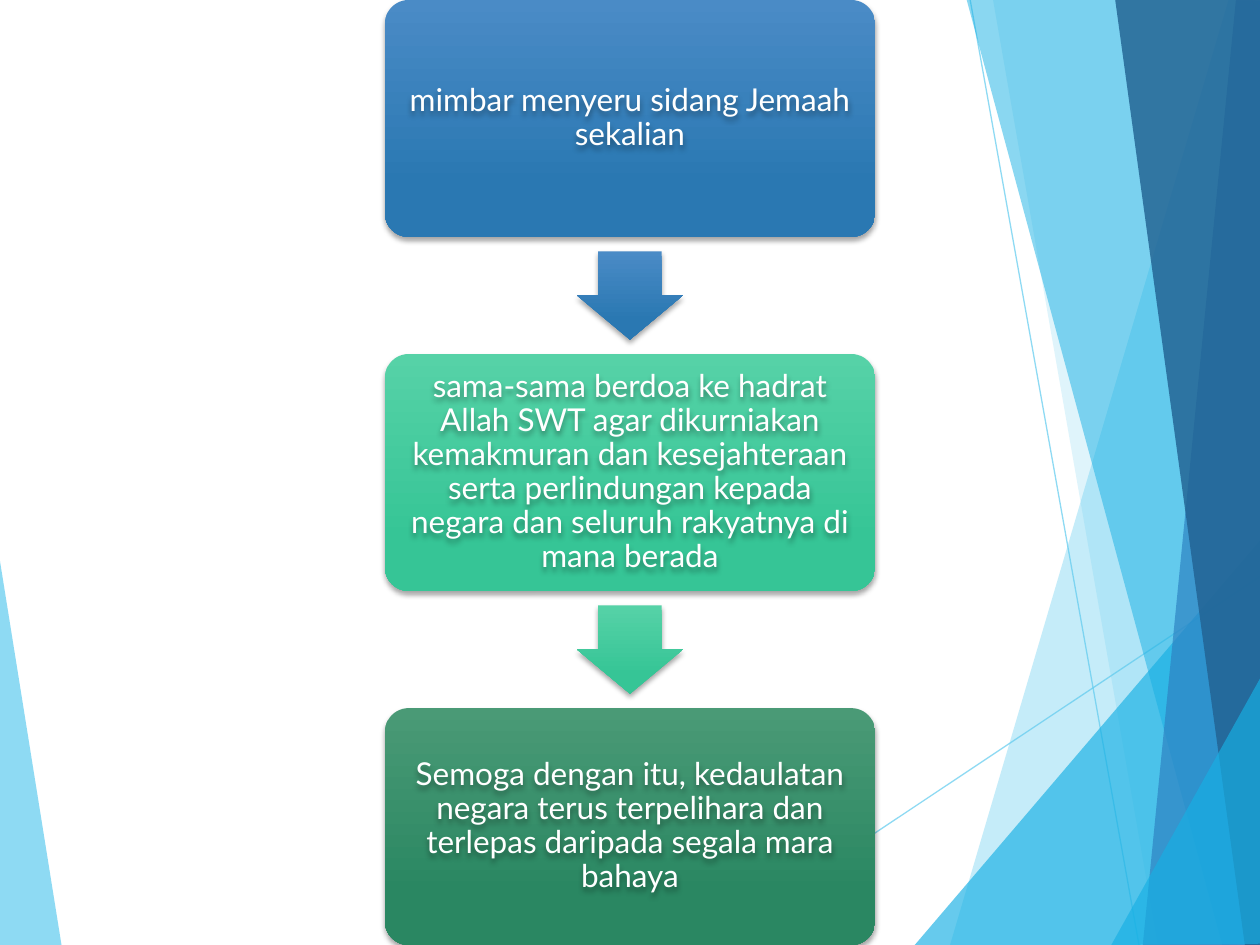
from dataclasses import dataclass

from lxml.etree import SubElement
from pptx import Presentation
from pptx.dml.color import RGBColor
from pptx.enum.shapes import MSO_CONNECTOR, MSO_SHAPE
from pptx.enum.text import MSO_ANCHOR, PP_ALIGN
from pptx.oxml.ns import qn
from pptx.util import Inches, Pt

COLORS = {
    "sky": "5FCBEF",
    "cyan": "17B0E4",
    "blue": "2E83C3",
    "navy": "226292",
    "white": "FFFFFF",
    "shadow": "000000",
    "step_blue_top": "4A8BC6",
    "step_blue_base": "2A78B2",
    "step_mint_top": "56D2A7",
    "step_mint_base": "36C596",
    "step_green_top": "4A9A76",
    "step_green_base": "2A8762",
}


@dataclass(frozen=True)
class Facet:
    points: tuple
    color: str
    opacity: int


@dataclass(frozen=True)
class Ray:
    start: tuple
    end: tuple


@dataclass(frozen=True)
class Step:
    text: str
    color: str


LEFT_FACET = Facet(((-0.01, 4.39), (0.49, 7.51), (-0.01, 7.5)), "sky", 70)
RAYS = (Ray((5.61, 7.5), (10.01, 4.57)), Ray((7.7, 0), (9.04, 7.5)))
RIGHT_FACETS = (
    Facet(((9.75, 0), (7.54, 7.5), (10.02, 7.51), (10.01, 0.01)), "sky", 36),
    Facet(((7.88, -0.01), (9.19, 7.5), (10.01, 7.5), (10.01, -0.01)), "sky", 20),
    Facet(((7.26, 7.5), (10, 4.29), (10.01, 7.5)), "cyan", 66),
    Facet(((7.67, -0.01), (9.7, 7.5), (10.01, 7.49), (10.01, -0.01)), "cyan", 50),
    Facet(((9.81, -0.01), (9.07, 7.5), (10.01, 7.5), (10, -0.01)), "blue", 70),
    Facet(((8.85, -0.01), (9.88, 7.5), (10.02, 7.5), (10, -0.01)), "navy", 82),
    Facet(((8.82, 7.5), (10.02, 5.35), (10.02, 7.49)), "cyan", 66),
)
STEPS = (
    Step("mimbar menyeru sidang Jemaah sekalian", "step_blue"),
    Step(
        "sama-sama berdoa ke hadrat Allah SWT agar dikurniakan kemakmuran dan "
        "kesejahteraan serta perlindungan kepada negara dan seluruh rakyatnya di "
        "mana berada",
        "step_mint",
    ),
    Step(
        "Semoga dengan itu, kedaulatan negara terus terpelihara dan terlepas "
        "daripada segala mara bahaya",
        "step_green",
    ),
)

CENTER = 5.0
STEP_WIDTH, STEP_HEIGHT, STEP_PITCH = 3.89, 1.88, 2.81
ARROW_WIDTH, ARROW_HEIGHT = 0.84, 0.7
TEXT_INSET = 0.055


def rgb(name: str) -> RGBColor:
    return RGBColor.from_string(COLORS[name])


def set_opacity(element, opacity: int) -> None:
    for color in element.iter(qn("a:srgbClr")):
        SubElement(color, qn("a:alpha"), val=str(opacity * 1000))


def draw_facet(page, facet: Facet) -> None:
    points = [(Inches(x), Inches(y)) for x, y in facet.points]
    builder = page.shapes.build_freeform(*points[0])
    builder.add_line_segments(points[1:], close=True)
    shape = builder.convert_to_shape()
    shape.shadow.inherit = False
    shape.fill.solid()
    shape.fill.fore_color.rgb = rgb(facet.color)
    shape.line.fill.background()
    set_opacity(shape.fill._xPr, facet.opacity)


def draw_ray(page, ray: Ray) -> None:
    ends = [Inches(value) for value in ray.start + ray.end]
    connector = page.shapes.add_connector(MSO_CONNECTOR.STRAIGHT, *ends)
    connector.line.color.rgb = rgb("sky")
    connector.line.width = Pt(0.75)
    properties = connector._element.spPr
    set_opacity(properties, 70)
    SubElement(properties, qn("a:effectLst"))


def add_shadow(shape) -> None:
    shape.shadow.inherit = False
    effects = shape._element.spPr.find(qn("a:effectLst"))
    shadow = SubElement(
        effects, qn("a:outerShdw"), blurRad=str(Pt(3)), dist=str(Pt(2)),
        dir="5400000", rotWithShape="0",
    )
    SubElement(shadow, qn("a:srgbClr"), val=COLORS["shadow"])
    set_opacity(shadow, 35)


def draw_gradient_shape(
    page, kind, top: float, width: float, height: float, color: str, adjustments: tuple
) -> None:
    shape = page.shapes.add_shape(
        kind, Inches(CENTER - width / 2), Inches(top), Inches(width), Inches(height)
    )
    for index, value in enumerate(adjustments):
        shape.adjustments[index] = value
    shape.fill.gradient()
    shape.fill.gradient_angle = 270
    stops = ((0, f"{color}_top"), (0.78, f"{color}_base"))
    for stop, (position, name) in zip(shape.fill.gradient_stops, stops):
        stop.position = position
        stop.color.rgb = rgb(name)
    shape.line.fill.background()
    add_shadow(shape)


def add_text(
    page, text: str, *, top: float, width: float, height: float,
    size: float = 18, font: str = "Lato", color: str = "white",
) -> None:
    box = page.shapes.add_textbox(
        Inches(CENTER - width / 2), Inches(top), Inches(width), Inches(height)
    )
    frame = box.text_frame
    frame.word_wrap = True
    frame.vertical_anchor = MSO_ANCHOR.MIDDLE
    frame.margin_left = frame.margin_right = Inches(0.07)
    frame.margin_top = frame.margin_bottom = Inches(0.07)
    para = frame.paragraphs[0]
    para.alignment = PP_ALIGN.CENTER
    para.line_spacing = 0.9
    span = para.add_run()
    span.text = text
    span.font.size = Pt(size)
    span.font.name = font
    span.font.color.rgb = rgb(color)
    add_shadow(box)


def draw_step(page, step: Step, top: float) -> None:
    draw_gradient_shape(
        page, MSO_SHAPE.ROUNDED_RECTANGLE, top, STEP_WIDTH, STEP_HEIGHT, step.color, (0.1,)
    )
    add_text(
        page, step.text, top=top + TEXT_INSET,
        width=STEP_WIDTH - 2 * TEXT_INSET, height=STEP_HEIGHT - 2 * TEXT_INSET,
    )


def draw_arrow(page, step: Step, top: float) -> None:
    gap = STEP_PITCH - STEP_HEIGHT
    arrow_top = top + STEP_HEIGHT + (gap - ARROW_HEIGHT) / 2
    draw_gradient_shape(
        page, MSO_SHAPE.DOWN_ARROW, arrow_top, ARROW_WIDTH, ARROW_HEIGHT, step.color, (0.5, 0.6)
    )
    arrow = page.shapes[-1]
    arrow.adjustments[0], arrow.adjustments[1] = 0.6, 0.5


def main() -> None:
    deck = Presentation()
    deck.slide_width, deck.slide_height = Inches(10), Inches(7.5)
    page = deck.slides.add_slide(deck.slide_layouts[6])
    draw_facet(page, LEFT_FACET)
    for ray in RAYS:
        draw_ray(page, ray)
    for facet in RIGHT_FACETS:
        draw_facet(page, facet)
    for index, step in enumerate(STEPS):
        top = index * STEP_PITCH
        draw_step(page, step, top)
        if index < len(STEPS) - 1:
            draw_arrow(page, step, top)
    deck.save("out.pptx")


if __name__ == "__main__":
    main()
